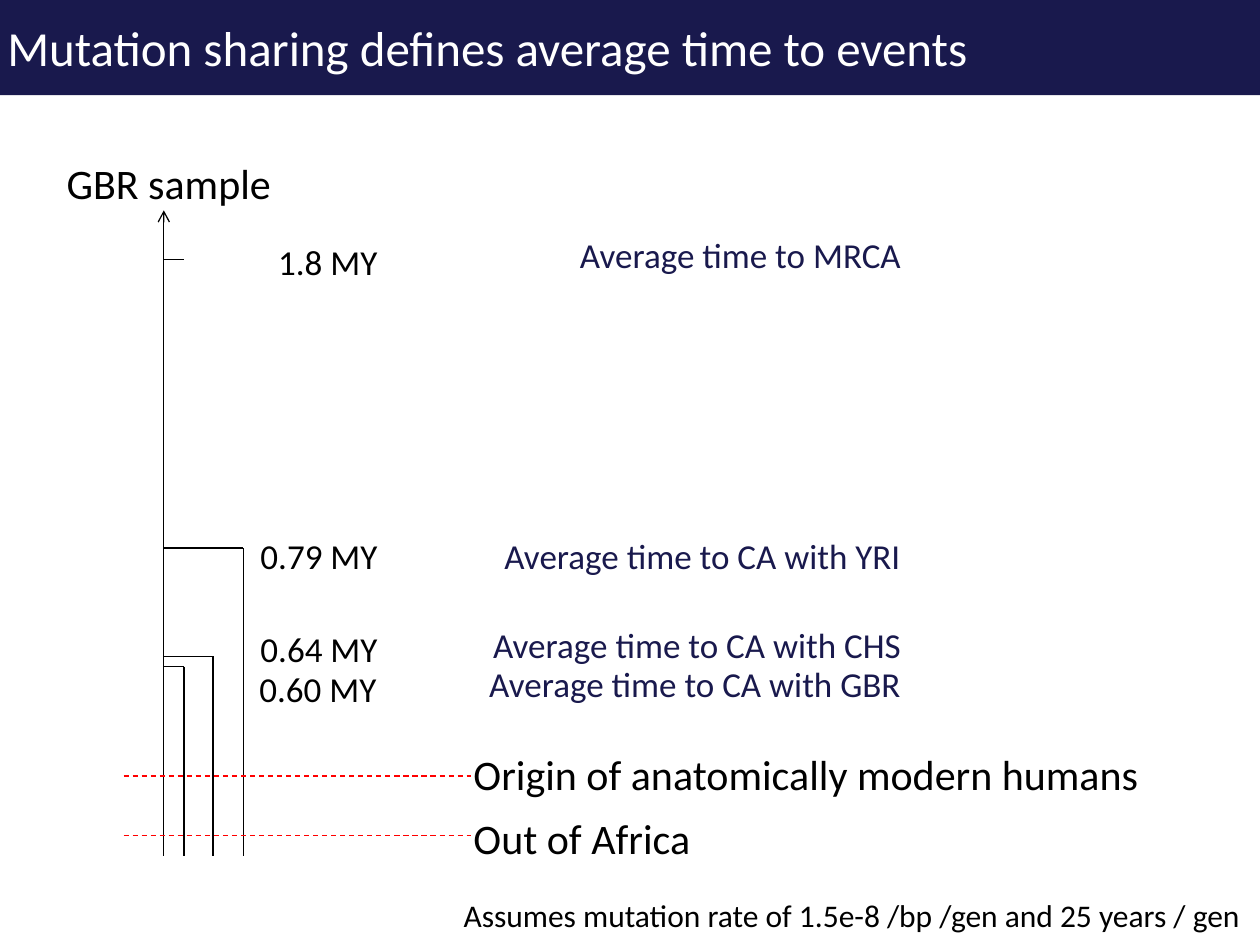
from dataclasses import dataclass

from lxml.etree import SubElement
from pptx import Presentation
from pptx.dml.color import RGBColor
from pptx.enum.dml import MSO_LINE
from pptx.enum.shapes import MSO_CONNECTOR, MSO_SHAPE
from pptx.enum.text import MSO_ANCHOR, MSO_AUTO_SIZE, PP_ALIGN
from pptx.oxml.ns import qn
from pptx.util import Pt


@dataclass(frozen=True)
class Theme:
    font: str = "Calibri"
    navy: RGBColor = RGBColor(0x19, 0x19, 0x4D)
    black: RGBColor = RGBColor(0, 0, 0)
    white: RGBColor = RGBColor(255, 255, 255)
    red: RGBColor = RGBColor(255, 0, 0)
    title_size: int = 28
    event_size: int = 24
    branch_size: int = 20
    note_size: int = 18
    line_width: float = 0.75


THEME = Theme()

LINEAGE_X = 93.6
PRESENT_Y = 488.9
TIMES_RIGHT = 223.9
MEANINGS_RIGHT = 524.5

# time, width, top; meaning, width, top; branch x, branch y, reaches the present
BRANCHES = [
    ("1.8 MY", 72, 133.9, "Average time to MRCA", 200.2, 129.6, 105.1, 148.3, False),
    ("0.60 MY", 82.8, 378, "Average time to CA with GBR", 252, 375.1, 105.1, 380.9, True),
    ("0.64 MY", 82.1, 355, "Average time to CA with CHS", 249.8, 352.8, 121.7, 375.1, True),
    ("0.79 MY", 82.1, 301.7, "Average time to CA with YRI", 243.4, 301.7, 139, 313.2, True),
]

# event, text top, text width, line y
EVENTS = [
    ("Out of Africa", 460.8, 139.7, 477.4),
    ("Origin of anatomically modern humans", 424.1, 398.2, 443.5),
]


def add_run(frame, text, size, color):
    run = frame.paragraphs[0].add_run()
    run.text = text
    run.font.name = THEME.font
    run.font.size = Pt(size)
    run.font.color.rgb = color


def add_label(shapes, text, left, top, width, size, color=THEME.black):
    label = shapes.add_textbox(Pt(left), Pt(top), Pt(width), Pt(size * 1.2 + 7.2))
    frame = label.text_frame
    frame.word_wrap = False
    frame.auto_size = MSO_AUTO_SIZE.SHAPE_TO_FIT_TEXT
    add_run(frame, text, size, color)


def add_line(shapes, start, end, color=THEME.black, dashed=False, arrow=False):
    line = shapes.add_connector(
        MSO_CONNECTOR.STRAIGHT, *(Pt(value) for value in (*start, *end))
    )
    line.line.color.rgb = color
    line.line.width = Pt(THEME.line_width)
    if dashed:
        line.line.dash_style = MSO_LINE.DASH
    properties = line._element.spPr
    if arrow:
        SubElement(properties.find(qn("a:ln")), qn("a:tailEnd"), type="arrow")
    SubElement(properties, qn("a:effectLst"))


def add_title(shapes, text):
    banner = shapes.add_shape(
        MSO_SHAPE.RECTANGLE, Pt(-2.9), Pt(-1.4), Pt(722.9), Pt(55.8)
    )
    banner.shadow.inherit = False
    banner.fill.solid()
    banner.fill.fore_color.rgb = THEME.navy
    banner.line.fill.background()
    frame = banner.text_frame
    frame.vertical_anchor = MSO_ANCHOR.MIDDLE
    frame.paragraphs[0].alignment = PP_ALIGN.LEFT
    add_run(frame, text, THEME.title_size, THEME.white)


def add_lineage(shapes):
    add_line(shapes, (LINEAGE_X, PRESENT_Y), (LINEAGE_X, 120.2), arrow=True)
    add_label(shapes, "GBR sample", 31, 86.4, 132.5, THEME.event_size)


def add_branch(shapes, time, time_width, time_top, meaning, meaning_width,
               meaning_top, x, y, reaches_present):
    """Add one split from the lineage, with its age and its meaning."""
    branch = shapes.add_group_shape().shapes
    add_label(branch, meaning, MEANINGS_RIGHT - meaning_width, meaning_top,
              meaning_width, THEME.branch_size, THEME.navy)
    add_line(branch, (LINEAGE_X, y), (x, y))
    if reaches_present:
        add_line(branch, (x, y), (x, PRESENT_Y))
    add_label(branch, time, TIMES_RIGHT - time_width, time_top,
              time_width, THEME.branch_size)


def add_events(shapes):
    events = shapes.add_group_shape().shapes
    for event, top, width, y in EVENTS:
        add_line(events, (70.6, y), (269.3, y), THEME.red, dashed=True)
        add_label(events, event, 263.5, top, width, THEME.event_size)


def main():
    presentation = Presentation()
    presentation.slide_width = Pt(720)
    presentation.slide_height = Pt(540)
    shapes = presentation.slides.add_slide(presentation.slide_layouts[6]).shapes

    add_title(shapes, "Mutation sharing defines average time to events")
    add_lineage(shapes)
    for branch in BRANCHES:
        add_branch(shapes, *branch)
    add_events(shapes)
    add_label(shapes, "Assumes mutation rate of 1.5e-8 /bp /gen and 25 years / gen",
              257.8, 508.3, 460.1, THEME.note_size)
    presentation.save("out.pptx")


if __name__ == "__main__":
    main()
